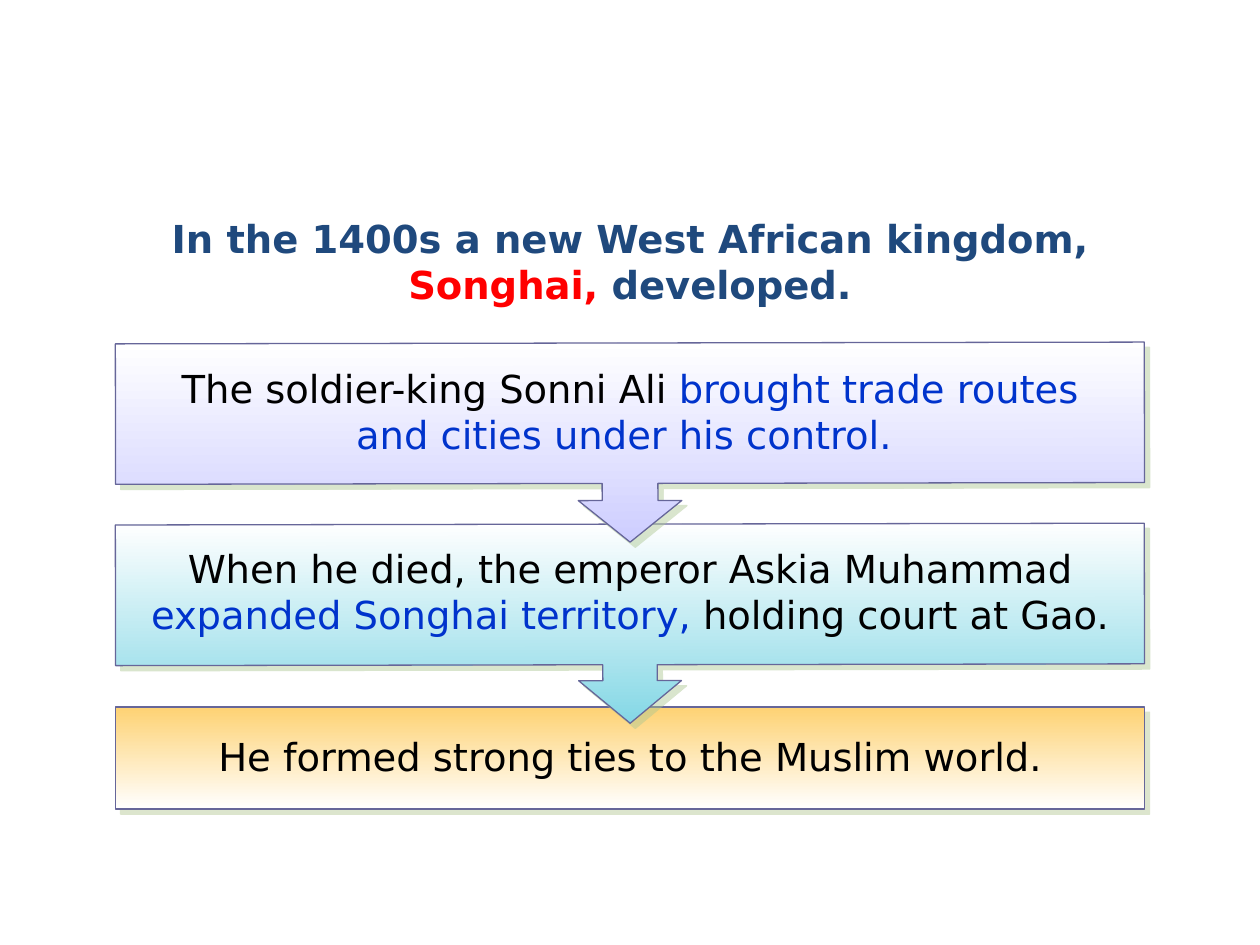
from dataclasses import dataclass

from lxml import etree
from pptx import Presentation
from pptx.dml.color import RGBColor
from pptx.enum.shapes import MSO_SHAPE
from pptx.enum.text import MSO_ANCHOR, MSO_AUTO_SIZE, PP_ALIGN
from pptx.oxml.ns import qn
from pptx.util import Pt

RECTANGLE = MSO_SHAPE.RECTANGLE
ARROW_CALLOUT = MSO_SHAPE.UP_ARROW_CALLOUT
CENTER = PP_ALIGN.CENTER
TOP = MSO_ANCHOR.TOP
GROW = MSO_AUTO_SIZE.SHAPE_TO_FIT_TEXT
NO_FIT = MSO_AUTO_SIZE.NONE


@dataclass(frozen=True)
class Theme:
    font: str = "DejaVu Sans"
    size: float = 22
    title: str = "1F497D"
    alert: str = "FF0000"
    text: str = "000000"
    emphasis: str = "0033CC"
    outline: str = "666699"
    white: str = "FFFFFF"
    lavender: str = "CDCDFF"
    aqua: str = "83D7E5"
    gold: str = "FED273"
    callout_shadow: str = "ADC793"
    box_shadow: str = "B3C793"


class SlideBuilder:
    def __init__(self, slide, theme):
        self.slide = slide
        self.theme = theme

    def fill_text(self, shape, parts, bold=False, space_after=0):
        """Fill a shape with one centred paragraph of (text, colour) parts."""
        text_frame = shape.text_frame
        text_frame.word_wrap = True
        text_frame.vertical_anchor = TOP
        paragraph = text_frame.paragraphs[0]
        paragraph.alignment = CENTER
        paragraph.space_after = Pt(space_after)
        for text, color in parts:
            run = paragraph.add_run()
            run.text = text
            run.font.name = self.theme.font
            run.font.size = Pt(self.theme.size)
            run.font.bold = bold
            run.font.color.rgb = RGBColor.from_string(color)

    def title(self, left, top, width, height, parts):
        shape = self.slide.shapes.title
        shape.left, shape.top = Pt(left), Pt(top)
        shape.width, shape.height = Pt(width), Pt(height)
        self.fill_text(shape, parts, bold=True, space_after=15.9)
        shape.text_frame.auto_size = NO_FIT

    def text(self, left, top, width, height, parts):
        shape = self.slide.shapes.add_textbox(Pt(left), Pt(top), Pt(width), Pt(height))
        self.fill_text(shape, parts)
        shape.text_frame.auto_size = GROW

    def panel(self, kind, left, top, width, height, colors, angle, shadow):
        """Add a shape with a two-colour gradient, thin outline and shadow."""
        shape = self.slide.shapes.add_shape(kind, Pt(left), Pt(top), Pt(width), Pt(height))
        shape.fill.gradient()
        shape.fill.gradient_angle = angle
        for stop, position, color in zip(shape.fill.gradient_stops, (0, 1), colors):
            stop.position = position
            stop.color.rgb = RGBColor.from_string(color)
        shape.line.color.rgb = RGBColor.from_string(self.theme.outline)
        shape.line.width = Pt(0.75)
        self.shadow(shape, shadow)
        return shape

    def callout(self, left, top, width, height, color, adjustments):
        """Add an arrow callout turned over so that it points down."""
        shape = self.panel(ARROW_CALLOUT, left, top, width, height,
                           (color, self.theme.white), 270, self.theme.callout_shadow)
        shape.rotation = 179.9
        shape._element.spPr.find(qn("a:xfrm")).set("flipH", "1")
        for index, value in enumerate(adjustments):
            shape.adjustments[index] = value

    def shadow(self, shape, color):
        shape.shadow.inherit = False
        effects = shape._element.spPr.find(qn("a:effectLst"))
        outer = etree.SubElement(effects, qn("a:outerShdw"), blurRad="0",
                                 dist=str(Pt(4.2)), dir="2700000",
                                 algn="ctr", rotWithShape="0")
        fill = etree.SubElement(outer, qn("a:srgbClr"), val=color)
        etree.SubElement(fill, qn("a:alpha"), val="46000")


def main():
    theme = Theme()
    presentation = Presentation()
    presentation.slide_width, presentation.slide_height = Pt(720), Pt(540)
    slide = presentation.slides.add_slide(presentation.slide_layouts[5])
    builder = SlideBuilder(slide, theme)
    left, width = 66, 588

    # Panels run from the last step up, so each arrow overlaps the next panel
    builder.panel(RECTANGLE, left, 404, width, 58.3,
                  (theme.white, theme.gold), 90, theme.box_shadow)
    builder.text(78, 415.5, 564, 34, [
        ("He formed strong ties to the Muslim world.", theme.text)])

    builder.callout(left, 299.5, width, 113.8, theme.aqua, (0.273, 0.258, 0.214, 0.706))
    builder.text(left, 308, width, 60, [
        ("When he died, the emperor Askia Muhammad ", theme.text),
        ("expanded Songhai territory, ", theme.emphasis),
        ("holding court at Gao.", theme.text)])

    builder.callout(left, 196, width, 113.8, theme.lavender, (0.28, 0.26, 0.209, 0.705))
    builder.text(84, 205, 552, 60, [
        ("The soldier-king Sonni Ali ", theme.text),
        ("brought trade routes and cities under his control. ", theme.emphasis)])

    # Title
    builder.title(36, 119, 648, 48, [
        ("In the 1400s a new West African kingdom, ", theme.title),
        ("Songhai,", theme.alert),
        (" developed.", theme.title)])

    presentation.save("out.pptx")


if __name__ == "__main__":
    main()
